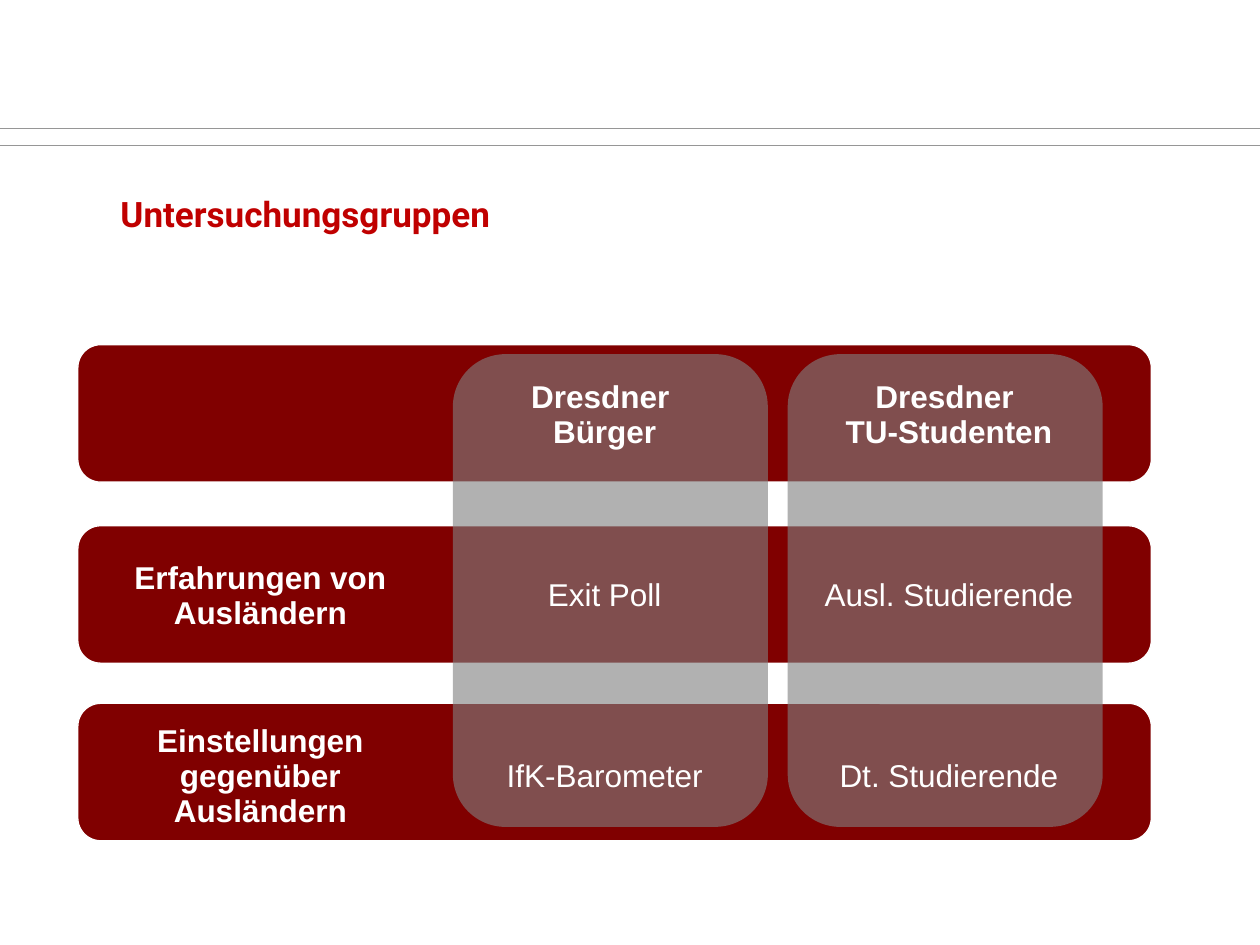
"""Build the slide on study groups, with bars and columns behind a table."""
from dataclasses import dataclass

from lxml import etree
from pptx import Presentation
from pptx.dml import color
from pptx.enum import shapes, text
from pptx.oxml import ns
from pptx.util import Cm, Pt


@dataclass(frozen=True)
class Theme:
    rule: color.RGBColor = color.RGBColor(0x96, 0x96, 0x96)
    bar: color.RGBColor = color.RGBColor(0x80, 0, 0)
    column: color.RGBColor = color.RGBColor(0x80, 0x80, 0x80)
    white: color.RGBColor = color.RGBColor(0xFF, 0xFF, 0xFF)
    title: color.RGBColor = color.RGBColor(0xC0, 0, 0)
    title_font: str = "Roboto"
    table_font: str = "Arial"
    title_size: int = 20
    table_size: int = 18
    column_opacity: int = 61
    plain_table: str = "{2D5ABB26-0587-4C30-8999-92F81FD0307C}"


THEME = Theme()
GROUPS = [
    ["", "Dresdner \nBürger", "Dresdner \nTU-Studenten"],
    ["Erfahrungen von Ausländern", "Exit Poll", "Ausl. Studierende"],
    ["Einstellungen gegenüber Ausländern", "IfK-Barometer", "Dt. Studierende"],
]


def style_font(font, name, size, rgb, bold):
    font.name, font.size, font.bold = name, Pt(size), bold
    font.color.rgb = rgb


def add_rule(slide, top):
    rule = slide.shapes.add_connector(
        shapes.MSO_CONNECTOR.STRAIGHT, Cm(-0.3), Cm(top), Cm(25.68), Cm(top))
    rule.line.color.rgb = THEME.rule
    rule.line.width = Pt(0.5)
    etree.SubElement(rule._element.spPr, ns.qn("a:effectLst"))


def add_rounded(slide, left, top, width, height, fill):
    panel = slide.shapes.add_shape(
        shapes.MSO_SHAPE.ROUNDED_RECTANGLE, Cm(left), Cm(top), Cm(width), Cm(height))
    panel.shadow.inherit = False
    panel.fill.solid()
    panel.fill.fore_color.rgb = fill
    return panel


def add_bar(slide, top):
    bar = add_rounded(slide, 1.57, top, 21.64, 2.77, THEME.bar)
    bar.line.color.rgb = THEME.white
    bar.line.width = Pt(0.75)


def add_column(slide, left):
    column = add_rounded(slide, left, 7.14, 6.35, 9.53, THEME.column)
    column.line.fill.background()
    fill_color = column._element.spPr.find(".//" + ns.qn("a:srgbClr"))
    etree.SubElement(fill_color, ns.qn("a:alpha"), val=str(THEME.column_opacity * 1000))


def add_group_table(slide):
    frame = slide.shapes.add_table(3, 3, Cm(1.78), Cm(6.55), Cm(20.82), Cm(10.92))
    groups = frame.table
    groups.horz_banding = False
    groups._tbl.tblPr.find(ns.qn("a:tableStyleId")).text = THEME.plain_table
    for r, row in enumerate(GROUPS):
        for c, label in enumerate(row):
            cell = groups.cell(r, c)
            cell.fill.background()
            cell.vertical_anchor = text.MSO_ANCHOR.MIDDLE
            cell.text_frame.text = label
            for paragraph in cell.text_frame.paragraphs:
                paragraph.alignment = text.PP_ALIGN.CENTER
                style_font(paragraph.font, THEME.table_font, THEME.table_size,
                           THEME.white, r == 0 or c == 0)
                for run in paragraph.runs:
                    style_font(run.font, THEME.table_font, THEME.table_size,
                               THEME.white, r == 0 or c == 0)


def add_title(slide, wording):
    title = slide.shapes.add_textbox(Cm(2.18), Cm(3.76), Cm(22.86), Cm(1.12))
    title.text_frame.word_wrap = True
    title.text_frame.auto_size = text.MSO_AUTO_SIZE.SHAPE_TO_FIT_TEXT
    title.text_frame.text = wording
    style_font(title.text_frame.paragraphs[0].runs[0].font, THEME.title_font,
               THEME.title_size, THEME.title, True)


def main():
    deck = Presentation()
    deck.slide_width, deck.slide_height = Cm(25.4), Cm(19.05)
    slide = deck.slides.add_slide(deck.slide_layouts[6])
    for top in (2.93, 2.58):
        add_rule(slide, top)
    for top in (6.95, 10.6, 14.18):
        add_bar(slide, top)
    for left in (9.13, 15.88):
        add_column(slide, left)
    add_group_table(slide)
    add_title(slide, "Untersuchungsgruppen")
    deck.save("out.pptx")


if __name__ == "__main__":
    main()
